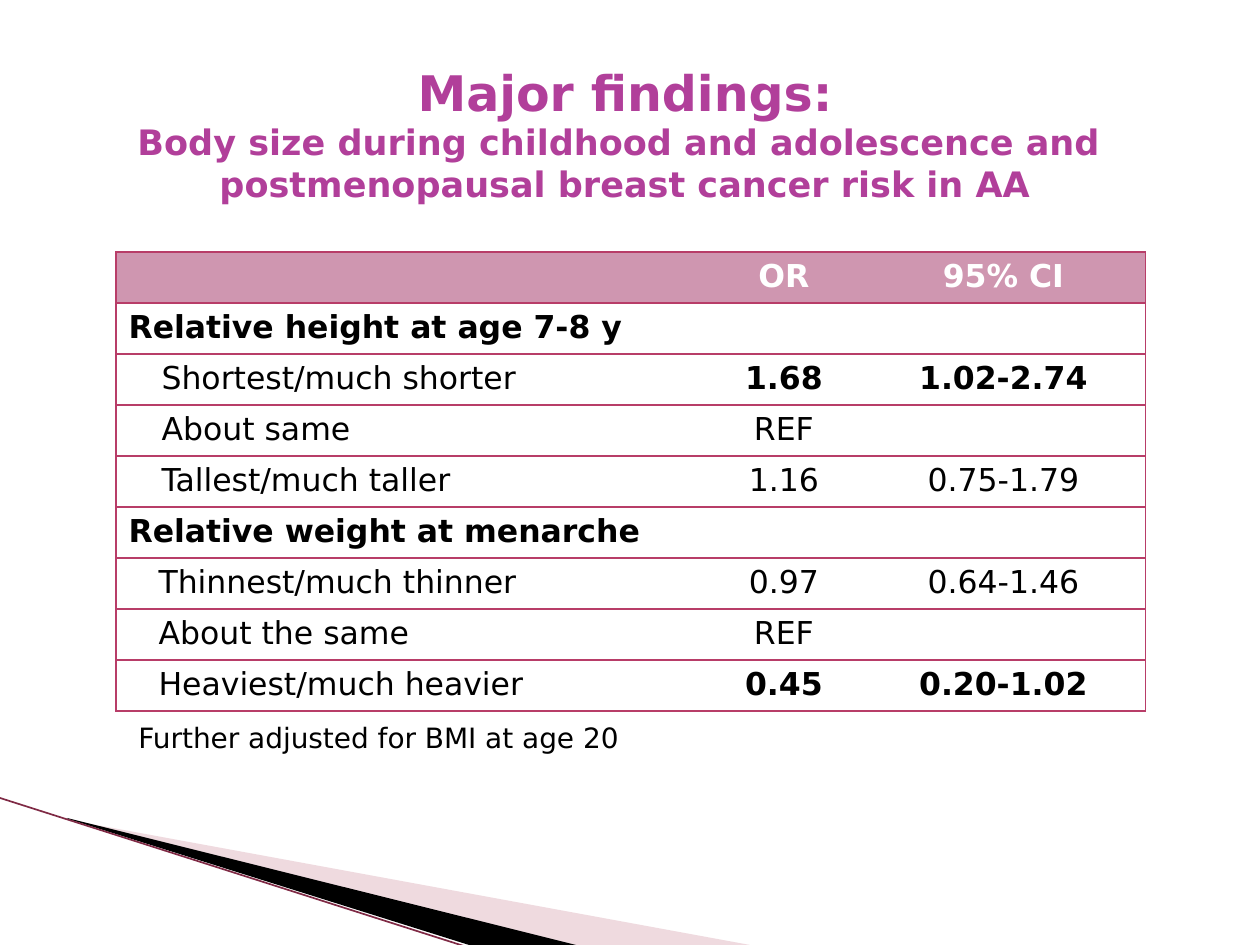
from lxml.etree import SubElement
from pptx import Presentation
from pptx.dml.color import RGBColor
from pptx.enum.shapes import MSO_CONNECTOR
from pptx.enum.text import MSO_ANCHOR, MSO_AUTO_SIZE, PP_ALIGN
from pptx.oxml import parse_xml
from pptx.oxml.ns import nsdecls, qn
from pptx.util import Emu, Pt

EMU_PER_PX = 914400 / 126
FONT = "DejaVu Sans"
COLORS = {
    "title": "B13F9A", "header": "CF96B0", "border": "B83D68",
    "text": "000000", "white": "FFFFFF", "wedge": "D8A3AF", "edge": "7F2A45",
}
COLUMNS = [591, 154, 285]
ROW_HEIGHT = 51
# Label, odds ratio, interval, label indent in px, bold label, bold values
ROWS = [
    ("", "OR", "95% CI", 0, True, True),
    ("Relative height at age 7-8 y", "", "", 0, True, False),
    ("Shortest/much shorter", "1.68", "1.02-2.74", 33, False, True),
    ("About same", "REF", "", 33, False, False),
    ("Tallest/much taller", "1.16", "0.75-1.79", 33, False, False),
    ("Relative weight at menarche", "", "", 0, True, False),
    ("Thinnest/much thinner", "0.97", "0.64-1.46", 30, False, False),
    ("About the same", "REF", "", 30, False, False),
    ("Heaviest/much heavier", "0.45", "0.20-1.02", 30, False, True),
]


def px(n):
    return Emu(round(n * EMU_PER_PX))


def rgb(name):
    return RGBColor.from_string(COLORS[name])


def set_font(font, size, color, bold=False):
    font.name, font.size, font.bold = FONT, Pt(size), bold
    font.color.rgb = rgb(color)


def add_wedge(slide, x, y, points, color, alpha=None):
    """Filled outline whose points are relative to (x, y)."""
    start, *rest = [(px(x + dx), px(y + dy)) for dx, dy in points]
    builder = slide.shapes.build_freeform(*start)
    builder.add_line_segments(rest)
    sp = builder.convert_to_shape()
    sp.shadow.inherit = False
    sp.line.fill.background()
    sp.fill.solid()
    sp.fill.fore_color.rgb = rgb(color)
    if alpha:
        clr = sp.fill._xPr.find(qn("a:solidFill"))[0]
        SubElement(clr, qn("a:alpha")).set("val", str(alpha * 1000))


def add_corner(slide, x, y):
    """Swoosh in the lower left corner."""
    add_wedge(slide, x, y, [(69, 22), (750, 147), (575, 147), (69, 21)], "wedge", 40)
    add_wedge(slide, x, y, [(67, 20), (576, 147), (469, 147), (68, 21)], "text")
    line = slide.shapes.add_connector(
        MSO_CONNECTOR.STRAIGHT, px(x), px(y), px(x + 467), px(y + 149))
    line.line.color.rgb = rgb("edge")
    line.line.width = Pt(0.95)
    SubElement(line._element.spPr, qn("a:effectLst"))


def add_title(slide, x, y, w, h):
    sp = slide.shapes.title
    sp.left, sp.top, sp.width, sp.height = map(px, (x, y, w, h))
    tf = sp.text_frame
    tf.word_wrap = True
    tf.vertical_anchor = MSO_ANCHOR.MIDDLE
    p = tf.paragraphs[0]
    p.alignment = PP_ALIGN.CENTER
    lines = [
        ("Major findings:", 28),
        ("Body size during childhood and adolescence and ", 20),
        ("postmenopausal breast cancer risk in AA", 20),
    ]
    for i, (text, size) in enumerate(lines):
        if i:
            p.add_line_break()
        r = p.add_run()
        r.text = text
        set_font(r.font, size, "title", True)


def set_borders(cell, sides):
    tc_pr = cell._tc.get_or_add_tcPr()
    for i, side in enumerate("LRTB"):
        fill = (f'<a:solidFill><a:srgbClr val="{COLORS["border"]}"/></a:solidFill>'
                if side in sides else "<a:noFill/>")
        tc_pr.insert(i, parse_xml(
            f'<a:ln{side} {nsdecls("a")} w="9525">{fill}</a:ln{side}>'))


def add_findings(slide, x, y):
    """Table of odds ratios with ruled rows and no inner vertical lines."""
    table = slide.shapes.add_table(
        len(ROWS), len(COLUMNS), px(x), px(y),
        px(sum(COLUMNS)), px(ROW_HEIGHT * len(ROWS))).table
    table.first_row = table.horz_banding = False
    for column, width in zip(table.columns, COLUMNS):
        column.width = px(width)
    sides = ["LTB", "TB", "RTB"]
    for i, (*texts, indent, bold_label, bold_values) in enumerate(ROWS):
        table.rows[i].height = px(ROW_HEIGHT)
        for j, text in enumerate(texts):
            cell = table.cell(i, j)
            if i == 0:
                cell.fill.solid()
                cell.fill.fore_color.rgb = rgb("header")
            else:
                cell.fill.background()
            set_borders(cell, sides[j])
            p = cell.text_frame.paragraphs[0]
            p.text = text
            if j:
                p.alignment = PP_ALIGN.CENTER
            elif indent:
                p._p.get_or_add_pPr().set("marL", str(px(indent)))
            set_font(p.font, 18, "text" if i else "white",
                     bold_values if j else bold_label)


def add_note(slide, x, y, w, h):
    tf = slide.shapes.add_textbox(*map(px, (x, y, w, h))).text_frame
    tf.word_wrap = False
    tf.auto_size = MSO_AUTO_SIZE.SHAPE_TO_FIT_TEXT
    p = tf.paragraphs[0]
    p.text = "Further adjusted for BMI at age 20"
    set_font(p.font, 16, "text")


def main():
    prs = Presentation()
    prs.slide_width, prs.slide_height = px(1260), px(945)
    slide = prs.slides.add_slide(prs.slide_layouts[5])
    add_corner(slide, 0, 798)
    add_title(slide, 42, 42, 1166, 183)
    add_findings(slide, 116, 252)
    add_note(slide, 126, 714, 522, 47)
    prs.save("out.pptx")


if __name__ == "__main__":
    main()
